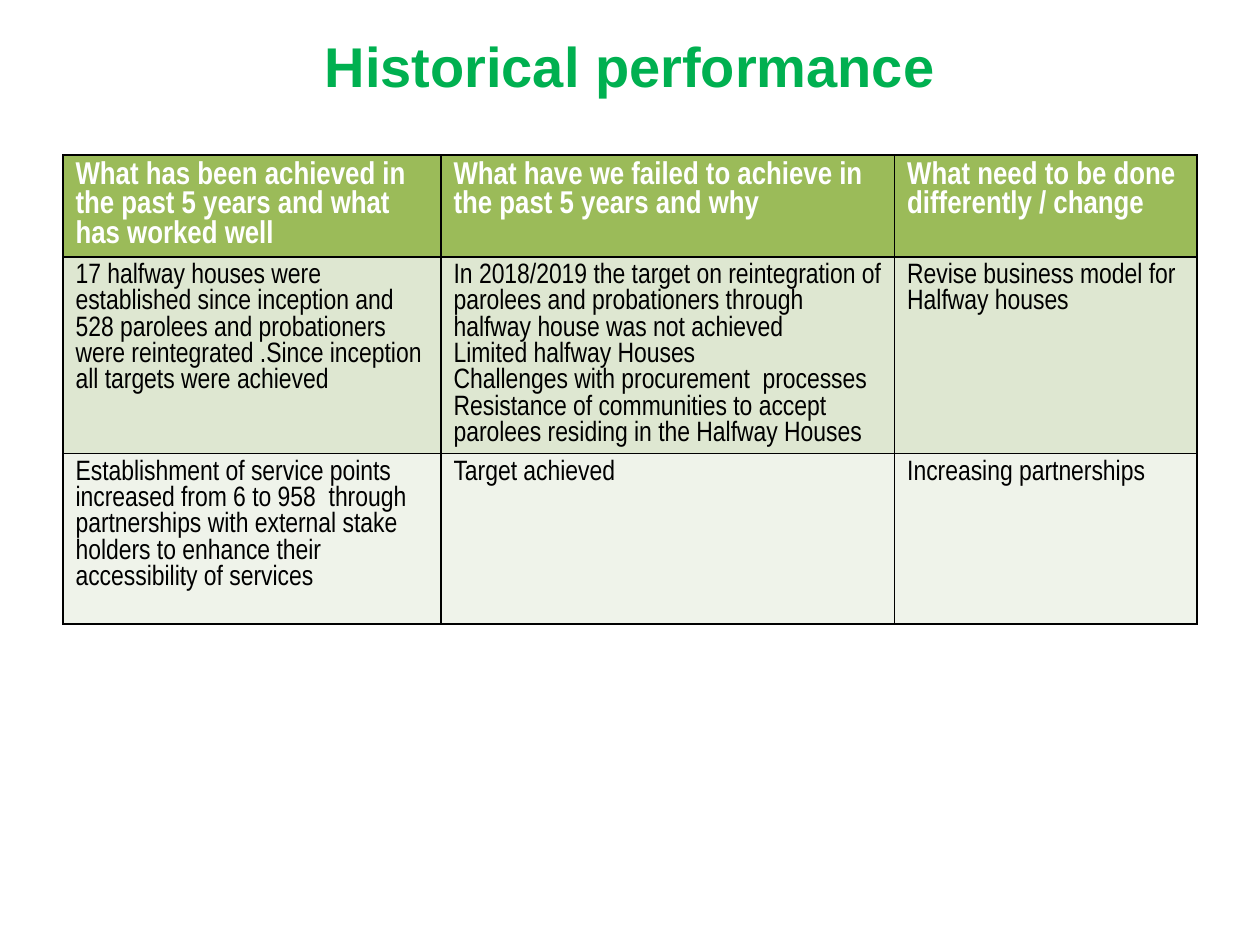
from dataclasses import dataclass

from lxml import etree
from pptx import Presentation
from pptx.dml.color import RGBColor
from pptx.enum.text import MSO_AUTO_SIZE, PP_ALIGN
from pptx.oxml.ns import qn
from pptx.util import Pt

CENTER = PP_ALIGN.CENTER
GROW = MSO_AUTO_SIZE.SHAPE_TO_FIT_TEXT
SIDES = ("a:lnL", "a:lnR", "a:lnT", "a:lnB")


@dataclass(frozen=True)
class Theme:
    title: str = "00B050"
    white: str = "FFFFFF"
    black: str = "000000"
    fills: tuple = ("9BBB59", "DEE7D1", "EFF3EA")
    font: str = "Arial"
    narrow: str = "Arial Narrow"
    large: int = 32
    head: int = 18
    body: int = 16
    border: int = 1


class Deck:
    def __init__(self, theme, slide):
        self.theme = theme
        self.slide = slide

    def add_text(self, para, text, font, size, color, bold=False):
        run = para.add_run()
        run.text = text
        run.font.name = font
        run.font.size = Pt(size)
        run.font.bold = bold
        run.font.color.rgb = RGBColor.from_string(color)

    def title(self, text, left, top, width, height):
        box = self.slide.shapes.add_textbox(Pt(left), Pt(top), Pt(width), Pt(height))
        frame = box.text_frame
        frame.word_wrap = True
        frame.auto_size = GROW
        para = frame.paragraphs[0]
        para.alignment = CENTER
        self.add_text(para, text, self.theme.font, self.theme.large, self.theme.title, True)

    def border(self, cell):
        props = cell._tc.get_or_add_tcPr()
        for side in SIDES:
            line = etree.SubElement(props, qn(side), w=str(Pt(self.theme.border)))
            fill = etree.SubElement(line, qn("a:solidFill"))
            etree.SubElement(fill, qn("a:srgbClr"), val=self.theme.black)

    def cell(self, cell, lines, row):
        theme = self.theme
        head = row == 0
        self.border(cell)
        cell.fill.solid()
        cell.fill.fore_color.rgb = RGBColor.from_string(theme.fills[row])
        size = theme.head if head else theme.body
        color = theme.white if head else theme.black
        frame = cell.text_frame
        for i, text in enumerate(lines):
            para = frame.add_paragraph() if i else frame.paragraphs[0]
            self.add_text(para, text, theme.narrow, size, color, head)

    def table(self, rows, left, top, widths, heights):
        frame = self.slide.shapes.add_table(
            len(rows), len(widths), Pt(left), Pt(top), Pt(sum(widths)), Pt(sum(heights)))
        table = frame.table
        for col, width in zip(table.columns, widths):
            col.width = Pt(width)
        for r, (cells, height) in enumerate(zip(rows, heights)):
            table.rows[r].height = Pt(height)
            for c, lines in enumerate(cells):
                self.cell(table.cell(r, c), lines, r)


ROWS = [
    [
        ["What has been achieved in the past 5 years and what has worked well"],
        ["What have we failed to achieve in the past 5 years and why"],
        ["What need to be done differently / change"],
    ],
    [
        ["17 halfway houses were established since inception and 528 parolees and "
         "probationers were reintegrated .Since inception all targets were achieved"],
        ["In 2018/2019 the target on reintegration of parolees and probationers "
         "through halfway house was not achieved",
         "Limited halfway Houses",
         "Challenges with procurement  processes",
         "Resistance of communities to accept  parolees residing in the Halfway Houses"],
        ["Revise business model for Halfway houses"],
    ],
    [
        ["Establishment of service points increased from 6 to 958  through partnerships "
         "with external stake holders to enhance their accessibility of services"],
        ["Target achieved"],
        ["Increasing partnerships"],
    ],
]


def main():
    prs = Presentation()
    prs.slide_width = Pt(720)
    prs.slide_height = Pt(540)
    deck = Deck(Theme(), prs.slides.add_slide(prs.slide_layouts[6]))
    deck.table(ROWS, 36, 88.6, (216, 259.2, 172.8), (58.2, 112.4, 97.5))
    deck.title("Historical performance", 36, 14.4, 648, 46)
    prs.save("out.pptx")


if __name__ == "__main__":
    main()
